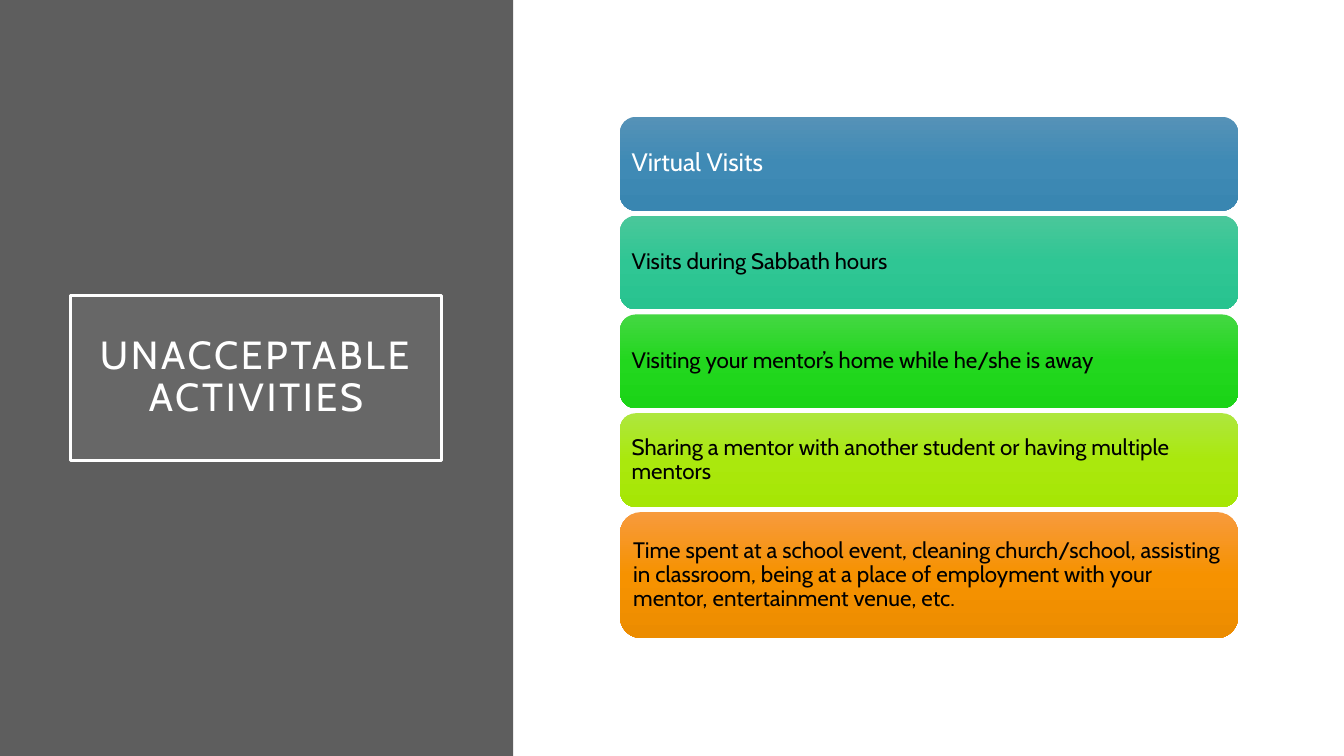
from pptx import Presentation
from pptx.dml.color import RGBColor
from pptx.enum.shapes import MSO_SHAPE
from pptx.enum.text import MSO_ANCHOR, PP_ALIGN
from pptx.oxml import parse_xml
from pptx.oxml.ns import nsdecls, qn
from pptx.util import Inches, Pt

# Content
TITLE = "UNACCEPTABLE ACTIVITIES"
WHITE = RGBColor(0xFF, 0xFF, 0xFF)
BLACK = RGBColor(0x00, 0x00, 0x00)
PANEL = RGBColor(0x5E, 0x5E, 0x5E)
TITLE_FILL = RGBColor(0x9E, 0x9E, 0x9E)

# text, height, size, text colour, gradient from top to bottom
ACTIVITIES = [
    ("Virtual Visits", 0.93, 18, WHITE, ("5592B7", "3F8AB5", "3986B1")),
    ("Visits during Sabbath hours", 0.93, 16, BLACK,
     ("4AC79A", "2FC694", "28C38F")),
    ("Visiting your mentor’s home while he/she is away", 0.93, 16, BLACK,
     ("44D742", "22D71E", "1BD417")),
    ("Sharing a mentor with another student or having multiple mentors",
     0.93, 16, BLACK, ("AEE73E", "AAE80D", "A6E605")),
    ("Time spent at a school event, cleaning church/school, assisting in "
     "classroom, being at a place of employment with your mentor, "
     "entertainment venue, etc.",
     1.25, 16, BLACK, ("F79A3D", "F69200", "EC8C00")),
]
BAR_LEFT, BAR_TOP, BAR_WIDTH, BAR_GAP = 6.15, 1.16, 6.13, 0.05


def add_box(slide, kind, left, top, width, height, fill=None):
    sp = slide.shapes.add_shape(
        kind, Inches(left), Inches(top), Inches(width), Inches(height))
    sp.shadow.inherit = False
    sp.line.fill.background()
    if fill is not None:
        sp.fill.solid()
        sp.fill.fore_color.rgb = fill
    return sp


def write(sp, text, size, color, align, inset):
    tf = sp.text_frame
    margin = Inches(inset)
    frame_format = {
        "word_wrap": True, "vertical_anchor": MSO_ANCHOR.MIDDLE,
        "margin_left": margin, "margin_right": margin,
        "margin_top": margin, "margin_bottom": margin,
    }
    for name, value in frame_format.items():
        setattr(tf, name, value)
    p = tf.paragraphs[0]
    p.alignment = align
    p.line_spacing = 0.9
    r = p.add_run()
    r.text = text
    for name, value in {"name": "Cabin", "size": Pt(size)}.items():
        setattr(r.font, name, value)
    r.font.color.rgb = color
    return r


def set_gradient(sp, colors):
    stops = "".join(
        f'<a:gs pos="{i * 50000}"><a:srgbClr val="{c}"/></a:gs>'
        for i, c in enumerate(colors))
    grad = parse_xml(
        f'<a:gradFill {nsdecls("a")} rotWithShape="1"><a:gsLst>{stops}</a:gsLst>'
        '<a:lin ang="5400000" scaled="0"/></a:gradFill>')
    sp._element.spPr.find(qn("a:prstGeom")).addnext(grad)


def main():
    prs = Presentation()
    prs.slide_width, prs.slide_height = Inches(13.33), Inches(7.5)
    s = prs.slides.add_slide(prs.slide_layouts[6])

    # Left panel
    add_box(s, MSO_SHAPE.RECTANGLE, 0, 0, 5.09, 7.5, PANEL)

    # Framed title with a translucent fill
    sp = add_box(s, MSO_SHAPE.RECTANGLE, 0.7, 2.93, 3.68, 1.64, TITLE_FILL)
    color = sp._element.spPr.find(qn("a:solidFill"))[0]
    color.append(parse_xml(f'<a:alpha {nsdecls("a")} val="15000"/>'))
    sp.line.color.rgb = WHITE
    sp.line.width = Pt(2.5)
    r = write(sp, TITLE, 28, WHITE, PP_ALIGN.CENTER, 0.2)
    r.font._element.set("spc", "200")

    # Stacked activity bars
    top = BAR_TOP
    for text, height, size, text_color, gradient in ACTIVITIES:
        sp = add_box(s, MSO_SHAPE.ROUNDED_RECTANGLE,
                     BAR_LEFT, top, BAR_WIDTH, height)
        set_gradient(sp, gradient)
        write(sp, text, size, text_color, PP_ALIGN.LEFT, 0.07)
        top += height + BAR_GAP

    prs.save("out.pptx")


if __name__ == "__main__":
    main()
